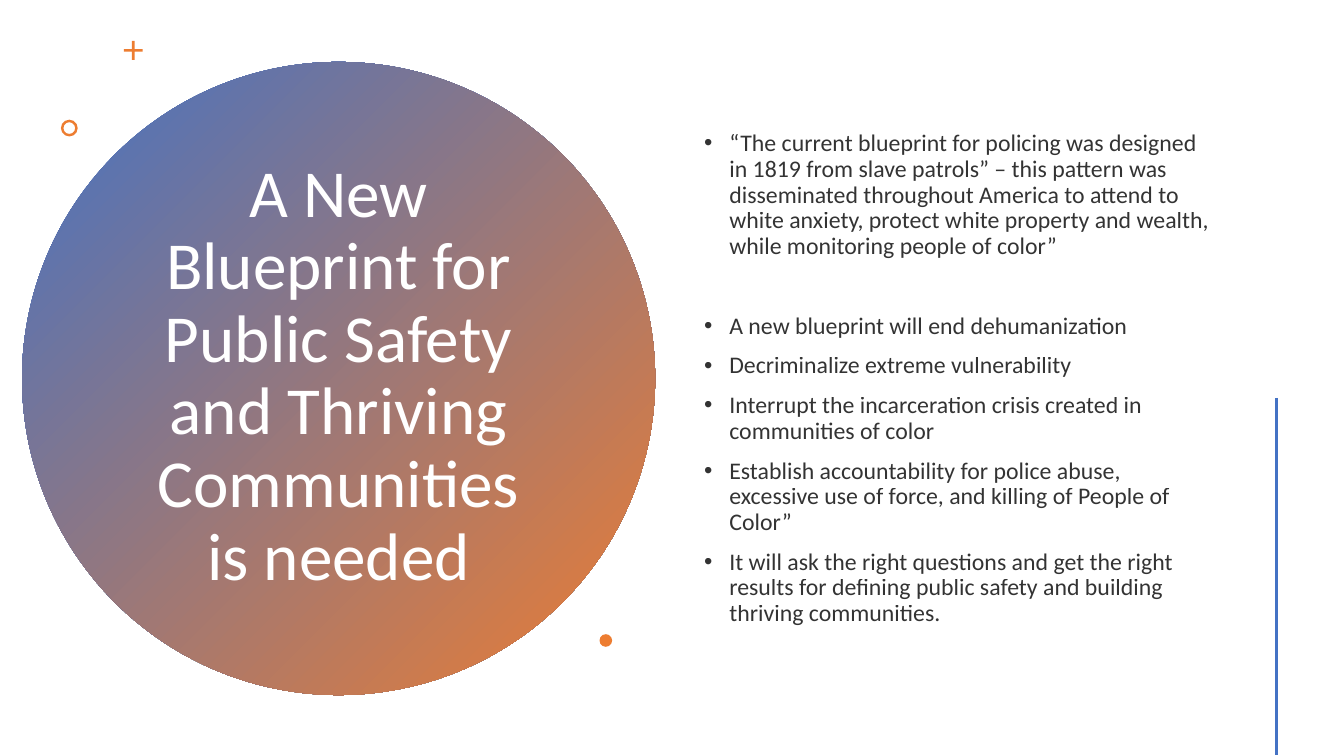
from dataclasses import dataclass

from lxml import etree
from pptx import Presentation
from pptx.dml.color import RGBColor
from pptx.enum.shapes import MSO_CONNECTOR, MSO_SHAPE
from pptx.enum.text import MSO_ANCHOR, MSO_AUTO_SIZE, PP_ALIGN
from pptx.oxml.ns import qn
from pptx.util import Pt

PX = 9525  # 96 px to the inch
OVAL, RING, PLUS = MSO_SHAPE.OVAL, MSO_SHAPE.DONUT, MSO_SHAPE.CROSS
STRAIGHT = MSO_CONNECTOR.STRAIGHT
MIDDLE, NO_FIT = MSO_ANCHOR.MIDDLE, MSO_AUTO_SIZE.NONE
CENTER, LEFT = PP_ALIGN.CENTER, PP_ALIGN.LEFT


@dataclass(frozen=True)
class Theme:
    font: str = "Calibri"
    blue: RGBColor = RGBColor(0x44, 0x72, 0xC4)
    orange: RGBColor = RGBColor(0xED, 0x7D, 0x31)
    white: RGBColor = RGBColor(0xFF, 0xFF, 0xFF)
    black: RGBColor = RGBColor(0, 0, 0)
    body_alpha: int = 80
    title_size: int = 48
    body_size: int = 17
    line_spacing: float = 0.9
    paragraph_gap: float = 10
    group_gap: float = 38.5
    rule_width: float = 2


THEME = Theme()

TITLE = "A New Blueprint for Public Safety and Thriving Communities is needed"
QUOTE = (
    "“The current blueprint for policing was designed in 1819 from slave patrols” – "
    "this pattern was disseminated throughout America to attend to white anxiety, "
    "protect white property and wealth, while monitoring people of color”"
)
GOALS = [
    "A new blueprint will end dehumanization",
    "Decriminalize extreme vulnerability",
    "Interrupt the incarceration crisis created in communities of color",
    "Establish accountability for police abuse, excessive use of force, "
    "and killing of People of Color”",
    "It will ask the right questions and get the right results for defining "
    "public safety and building thriving communities.",
]


def place(shape, box):
    shape.left, shape.top, shape.width, shape.height = (n * PX for n in box)


def add_mark(page, kind, box, color, adjustment=None):
    mark = page.shapes.add_shape(kind, *(n * PX for n in box))
    mark.shadow.inherit = False
    mark.line.fill.background()
    mark.fill.solid()
    mark.fill.fore_color.rgb = color
    if adjustment is not None:
        mark.adjustments[0] = adjustment
    return mark


def prepare_frame(placeholder, box):
    place(placeholder, box)
    frame = placeholder.text_frame
    frame.word_wrap = True
    frame.auto_size = NO_FIT
    frame.vertical_anchor = MIDDLE
    return frame


def write(para, text, size, color, align):
    para.alignment = align
    para.line_spacing = THEME.line_spacing
    span = para.add_run()
    span.text = text
    span.font.name = THEME.font
    span.font.size = Pt(size)
    span.font.color.rgb = color
    return span


def set_alpha(span, percent):
    color = span.font._element.find(".//" + qn("a:srgbClr"))
    etree.SubElement(color, qn("a:alpha")).set("val", str(percent * 1000))


def set_bullet(para, indent):
    properties = para._p.get_or_add_pPr()
    properties.set("marL", str(indent * PX))
    properties.set("indent", str(-indent * PX))
    etree.SubElement(properties, qn("a:buFont")).set("typeface", "Arial")
    etree.SubElement(properties, qn("a:buChar")).set("char", "•")


def title_region(page, box):
    left, top, size, _ = box
    # Gradient disc, kept behind the title
    disc = add_mark(page, OVAL, box, THEME.blue)
    disc.fill.gradient()
    disc.fill.gradient_angle = 315
    for stop, color in zip(disc.fill.gradient_stops, (THEME.blue, THEME.orange)):
        stop.color.rgb = color
    page.shapes._spTree.insert(2, disc._element)

    # Title
    frame = prepare_frame(page.shapes.title, (left + 110, top + 76, size - 220, 448))
    write(frame.paragraphs[0], TITLE, THEME.title_size, THEME.white, CENTER)

    # Small ornaments around the disc
    add_mark(page, PLUS, (left + 97, top - 20, 18, 18), THEME.orange, 0.43)
    add_mark(page, RING, (left + 37, top + 55, 16, 16), THEME.orange, 0.15)
    add_mark(page, OVAL, (left + 550, top + 545, 12, 12), THEME.orange)


def list_region(page, box):
    frame = prepare_frame(page.placeholders[1], box)
    for index, text in enumerate([QUOTE, *GOALS]):
        para = frame.add_paragraph() if index else frame.paragraphs[0]
        span = write(para, text, THEME.body_size, THEME.black, LEFT)
        set_alpha(span, THEME.body_alpha)
        # A wider gap parts the quote from the goals
        para.space_before = Pt(THEME.group_gap if index == 1 else THEME.paragraph_gap)
        para.space_after = Pt(0)
        set_bullet(para, 24)


def side_rule(page, box):
    left, top, _, height = (n * PX for n in box)
    rule = page.shapes.add_connector(STRAIGHT, left, top, left, top + height)
    rule.line.color.rgb = THEME.blue
    rule.line.width = Pt(THEME.rule_width)
    etree.SubElement(rule._element.spPr, qn("a:effectLst"))


def main():
    deck = Presentation()
    deck.slide_width, deck.slide_height = 1280 * PX, 720 * PX
    page = deck.slides.add_slide(deck.slide_layouts[1])
    title_region(page, (21, 59, 603, 603))
    list_region(page, (661, 55, 501, 612))
    side_rule(page, (1216, 379, 0, 340))
    deck.save("out.pptx")


if __name__ == "__main__":
    main()
